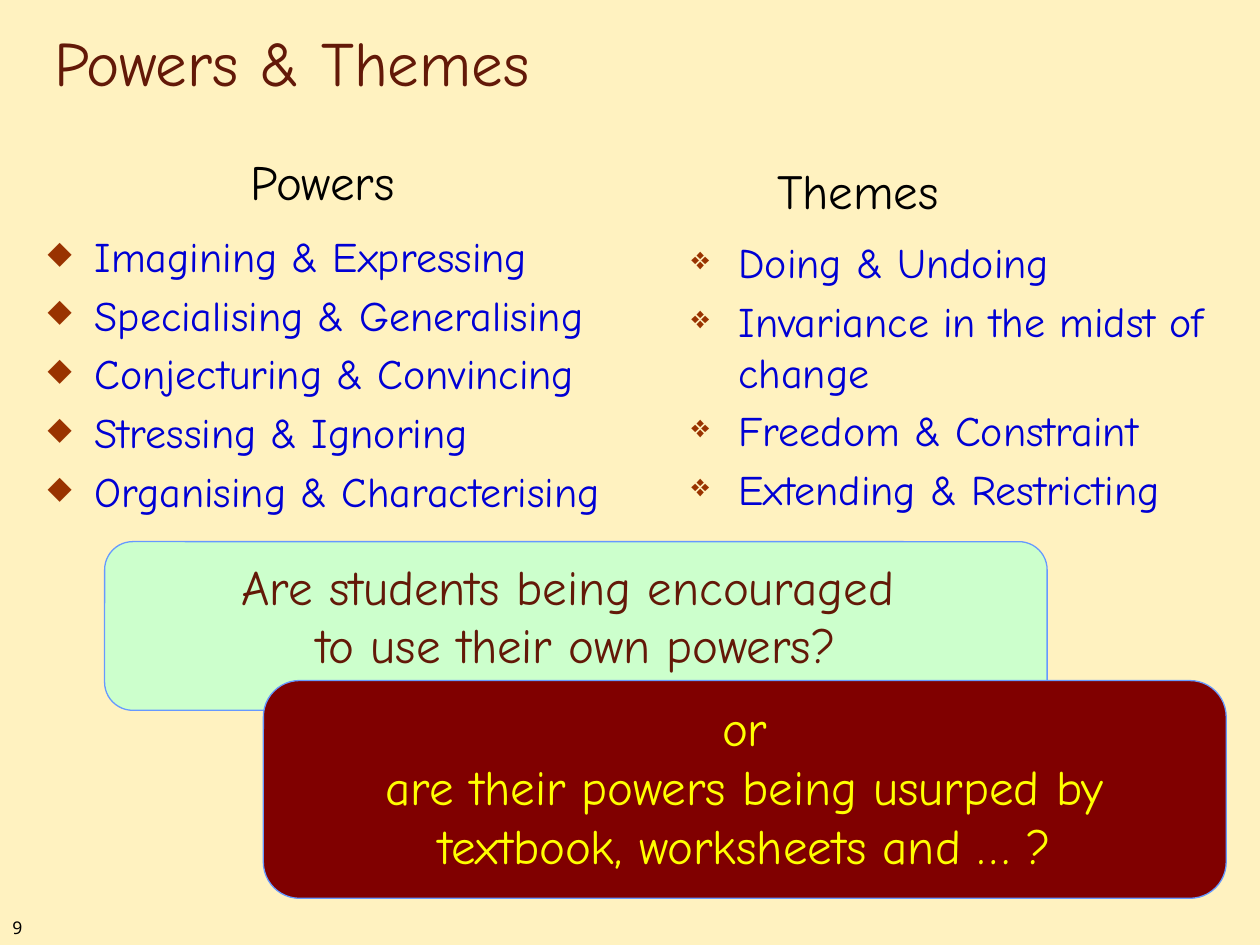
from lxml import etree
from pptx import Presentation
from pptx.dml.color import RGBColor
from pptx.enum.shapes import MSO_SHAPE as Shape
from pptx.enum.text import MSO_ANCHOR as Anchor, PP_ALIGN as Align
from pptx.oxml.ns import qn
from pptx.util import Cm, Pt

BROWN, BLUE, BLACK, RUST = "631908", "0000D4", "000000", "993300"

POWERS = [
    "Imagining & Expressing",
    "Specialising & Generalising",
    "Conjecturing & Convincing",
    "Stressing & Ignoring",
    "Organising & Characterising",
]
THEMES = [
    "Doing & Undoing",
    "Invariance in the midst of change",
    "Freedom & Constraint",
    "Extending & Restricting",
]


def color(code):
    return RGBColor.from_string(code)


def add_bullet(para, mark):
    """Give the paragraph a hanging indent and a small rust mark."""
    props = para._p.get_or_add_pPr()
    props.set("marL", str(Cm(0.95)))
    props.set("indent", str(-Cm(0.95)))
    tint = etree.SubElement(props, qn("a:buClr"))
    etree.SubElement(tint, qn("a:srgbClr"), val=RUST)
    etree.SubElement(props, qn("a:buSzPct"), val="75000")
    etree.SubElement(props, qn("a:buChar"), char=mark)


def write(shape, lines, size=28, ink=BLACK, font="Comic Neue",
          align=Align.LEFT, anchor=Anchor.TOP, mark=None):
    """Write one paragraph per line, bulleted if a mark is given."""
    frame = shape.text_frame
    frame.word_wrap = True
    frame.vertical_anchor = anchor
    for i, line in enumerate(lines):
        para = frame.add_paragraph() if i else frame.paragraphs[0]
        para.text = line
        para.alignment = align
        if mark:
            para.space_before = Pt(size * 0.2)
            add_bullet(para, mark)
        for run in para.runs:
            run.font.size = Pt(size)
            run.font.name = font
            run.font.color.rgb = color(ink)


def add_text(slide, box, lines, **style):
    area = slide.shapes.add_textbox(*map(Cm, box))
    write(area, lines, **style)


def add_card(slide, box, text, fill, ink):
    card = slide.shapes.add_shape(Shape.ROUNDED_RECTANGLE, *map(Cm, box))
    card.shadow.inherit = False
    card.fill.solid()
    card.fill.fore_color.rgb = color(fill)
    card.line.color.rgb = color("6699FF")
    card.line.width = Pt(0.75)
    write(card, [text], ink=ink, align=Align.CENTER)


def main():
    deck = Presentation()
    deck.slide_width, deck.slide_height = Cm(25.4), Cm(19.05)
    slide = deck.slides.add_slide(deck.slide_layouts[6])
    back = slide.background.fill
    back.solid()
    back.fore_color.rgb = color("FFF2C0")

    add_text(slide, (0, 18.36, 1.09, 0.69), ["9"], size=10, font="Noto Sans")
    add_text(slide, (0.84, 0.43, 21.59, 1.7), ["Powers & Themes"],
             size=36, ink=BROWN, anchor=Anchor.BOTTOM)
    add_text(slide, (0.71, 4.52, 12.19, 5.99), POWERS,
             size=24, ink=BLUE, mark="◆")
    add_text(slide, (13.69, 4.65, 11.2, 5.66), THEMES,
             size=24, ink=BLUE, mark="❖")
    for left, top, head in ((2.11, 2.92, "Powers"), (12.9, 3.12, "Themes")):
        add_text(slide, (left, top, 8.79, 1.45), [head], align=Align.CENTER)

    add_card(slide, (2.11, 10.92, 19, 3.4),
             "Are students being encouraged \nto use their own powers?",
             "CCFFCC", BROWN)
    add_card(slide, (5.31, 13.72, 19.41, 4.39),
             "or\nare their powers being usurped by "
             "textbook, worksheets and … ?",
             "800000", "FFFF00")
    deck.save("out.pptx")


if __name__ == "__main__":
    main()
